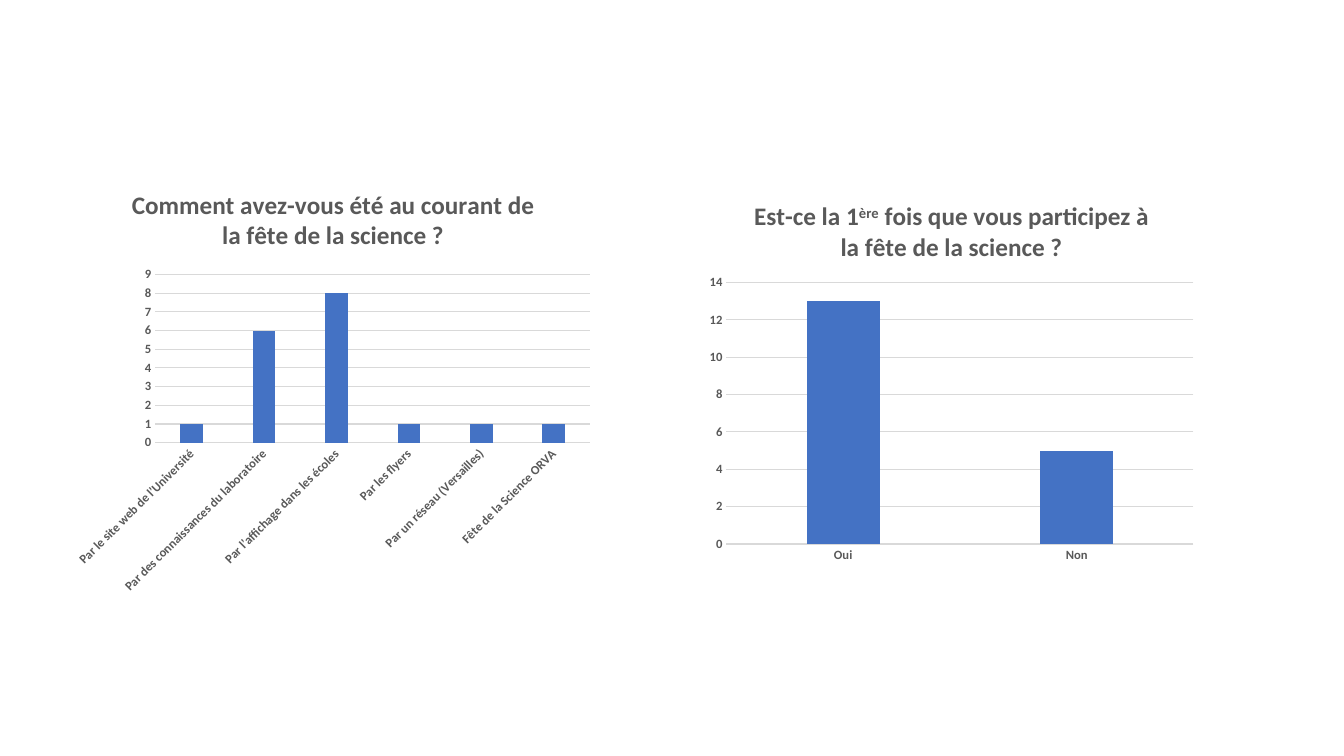
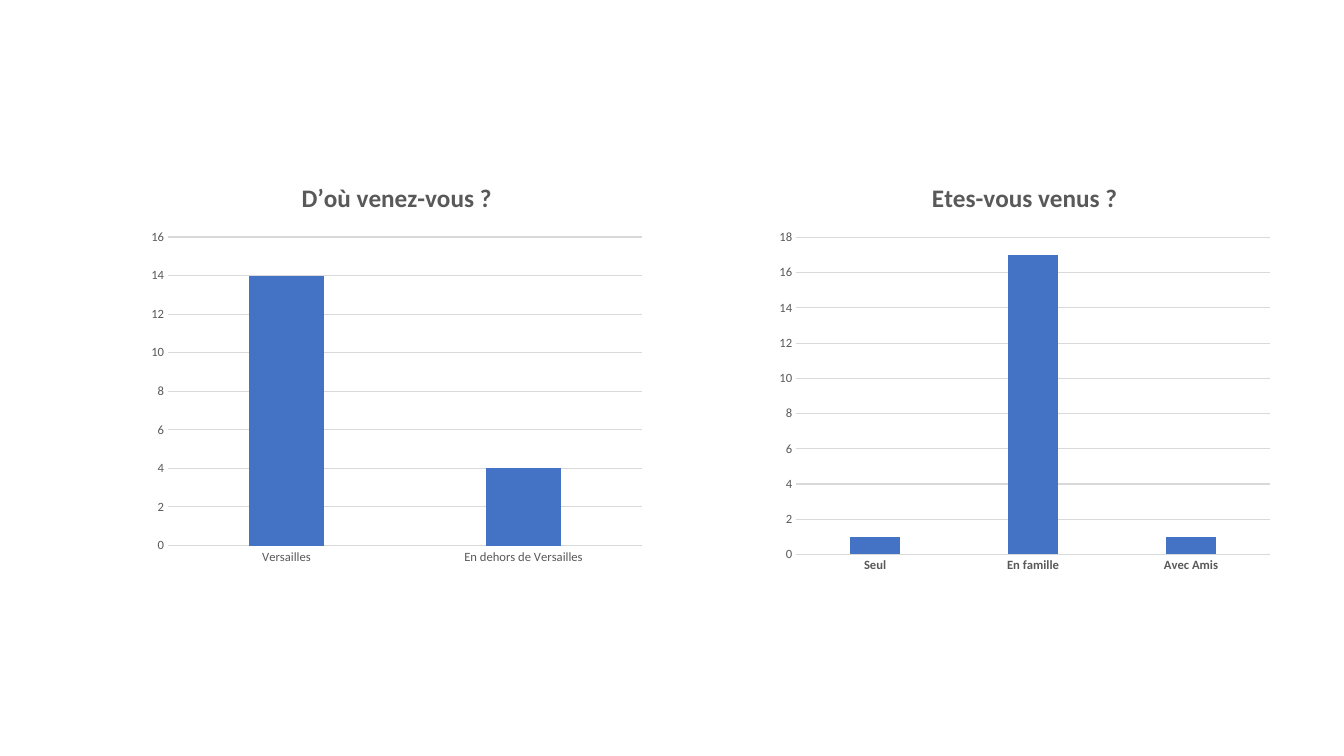
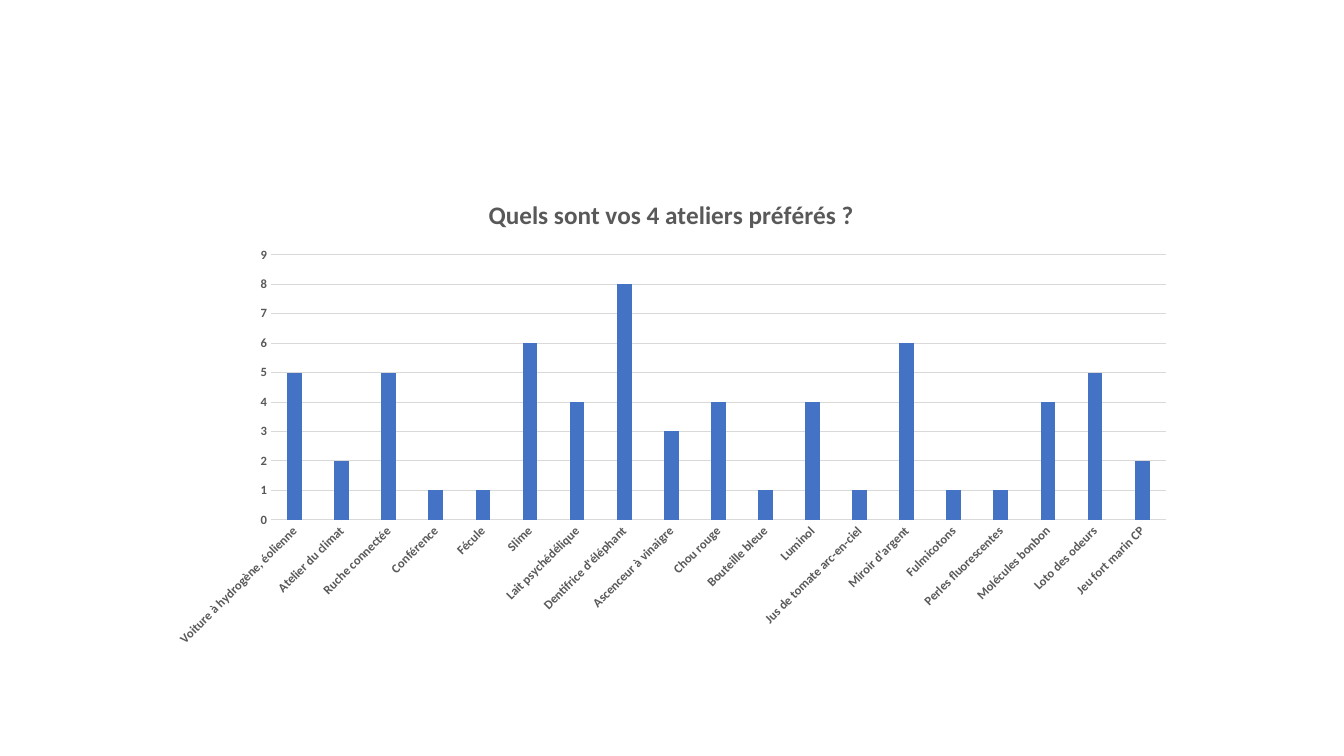
from dataclasses import dataclass

from pptx import Presentation
from pptx.chart.data import CategoryChartData
from pptx.dml.color import RGBColor
from pptx.enum.chart import XL_CHART_TYPE, XL_TICK_MARK
from pptx.util import Pt

COLUMNS = XL_CHART_TYPE.COLUMN_CLUSTERED
NO_TICK = XL_TICK_MARK.NONE
BLANK_LAYOUT = 6


@dataclass(frozen=True)
class Theme:
    font: str = "Calibri"
    text: str = "595959"
    base: str = "000000"
    rule: str = "D9D9D9"
    column: str = "4472C4"
    title_size: float = 18
    base_size: float = 10
    label_size: float = 9
    rule_width: float = 0.75
    gap: int = 219
    overlap: int = -27


def format_font(font, name, size, color, bold=False):
    font.name = name
    font.size = Pt(size)
    font.bold = bold
    font.color.rgb = RGBColor.from_string(color)


def add_text(paragraph, text, superscript=False, **font_format):
    run = paragraph.add_run()
    run.text = text
    format_font(run.font, **font_format)
    if superscript:
        run.font._element.set("baseline", "30000")


class SurveyDeck:
    def __init__(self, theme):
        self.theme = theme
        self.presentation = Presentation()
        self.presentation.slide_width = Pt(960)
        self.presentation.slide_height = Pt(540)
        self.slide = None

    def add_slide(self):
        layout = self.presentation.slide_layouts[BLANK_LAYOUT]
        self.slide = self.presentation.slides.add_slide(layout)

    def draw_rule(self, line):
        line.color.rgb = RGBColor.from_string(self.theme.rule)
        line.width = Pt(self.theme.rule_width)

    def format_title(self, chart, title):
        theme = self.theme
        chart.has_title = True
        chart.chart_title.include_in_layout = False
        paragraph = chart.chart_title.text_frame.paragraphs[0]
        for index, text in enumerate(title):
            add_text(paragraph, text, superscript=index == 1, name=theme.font,
                     size=theme.title_size, color=theme.text, bold=True)

    def format_axis(self, axis, bold):
        theme = self.theme
        axis.major_tick_mark = NO_TICK
        axis.minor_tick_mark = NO_TICK
        format_font(axis.tick_labels.font, theme.font, theme.label_size,
                    theme.text, bold)

    def add_column_chart(self, title, counts, left, top, width, height,
                         bold_categories=True, bold_values=True, slanted=False):
        theme = self.theme
        data = CategoryChartData()
        data.categories = list(counts)
        data.add_series("Series 1", list(counts.values()))
        chart = self.slide.shapes.add_chart(
            COLUMNS, Pt(left), Pt(top), Pt(width), Pt(height), data).chart
        format_font(chart.font, theme.font, theme.base_size, theme.base)
        chart.has_legend = False
        self.format_title(chart, title)

        category_axis, value_axis = chart.category_axis, chart.value_axis
        self.format_axis(category_axis, bold_categories)
        self.format_axis(value_axis, bold_values)
        self.draw_rule(category_axis.format.line)
        value_axis.format.line.fill.background()
        value_axis.has_major_gridlines = True
        self.draw_rule(value_axis.major_gridlines.format.line)
        if slanted:
            category_axis._element.txPr.bodyPr.set("rot", "-2700000")

        plot = chart.plots[0]
        plot.vary_by_categories = False
        plot.gap_width = theme.gap
        plot.overlap = theme.overlap
        fill = plot.series[0].format.fill
        fill.solid()
        fill.fore_color.rgb = RGBColor.from_string(theme.column)


def main():
    deck = SurveyDeck(Theme())

    deck.add_slide()
    deck.add_column_chart(
        ["Comment avez-vous été au courant de la fête de la science ?"],
        {
            "Par le site web de l’Université": 1,
            "Par des connaissances du laboratoire": 6,
            "Par l’affichage dans les écoles": 8,
            "Par les flyers": 1,
            "Par un réseau (Versailles)": 1,
            "Fête de la Science ORVA": 1,
        },
        46.8, 120.2, 382.3, 310.3, slanted=True)
    deck.add_column_chart(
        ["Est-ce la 1", "ère",
         " fois que vous participez à la fête de la science ?"],
        {"Oui": 13, "Non": 5},
        499.7, 131, 360, 276.5)

    deck.add_slide()
    deck.add_column_chart(
        ["D’où venez-vous ?"],
        {"Versailles": 14, "En dehors de Versailles": 4},
        100.8, 115.9, 365, 293, bold_categories=False, bold_values=False)
    deck.add_column_chart(
        ["Etes-vous venus ?"],
        {"Seul": 1, "En famille": 17, "Avec Amis": 1},
        549.4, 115.9, 365, 299.5, bold_values=False)

    deck.add_slide()
    deck.add_column_chart(
        ["Quels sont vos 4 ateliers préférés ?"],
        {
            "Voiture à hydrogène, éolienne": 5,
            "Atelier du climat": 2,
            "Ruche connectée": 5,
            "Conférence": 1,
            "Fécule": 1,
            "Slime": 6,
            "Lait psychédélique": 4,
            "Dentifrice d'éléphant": 8,
            "Ascenceur à vinaigre": 3,
            "Chou rouge": 4,
            "Bouteille bleue": 1,
            "Luminol": 4,
            "Jus de tomate arc-en-ciel": 1,
            "Miroir d'argent": 6,
            "Fulmicotons": 1,
            "Perles fluorescentes": 1,
            "Molécules bonbon": 4,
            "Loto des odeurs": 5,
            "Jeu fort marin CP": 2,
        },
        111.6, 126.7, 735.8, 342, slanted=True)

    deck.presentation.save("out.pptx")


if __name__ == "__main__":
    main()
